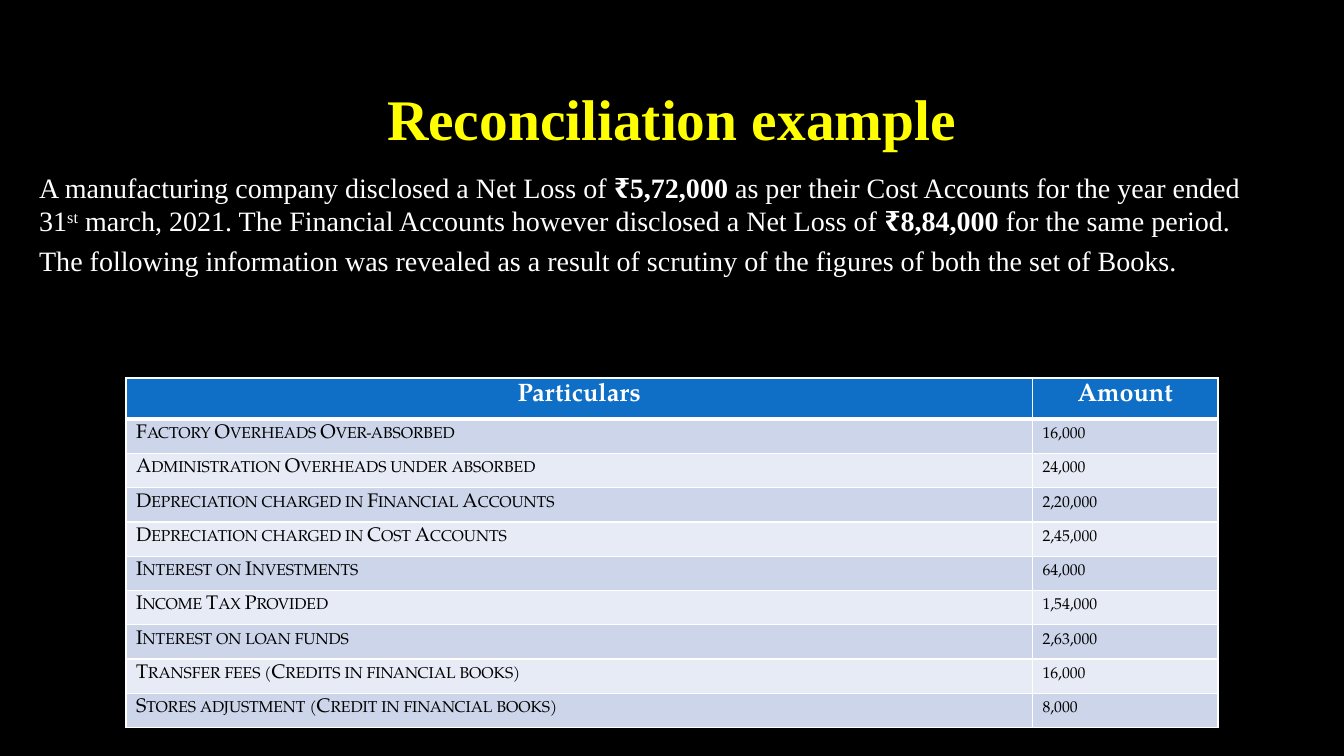
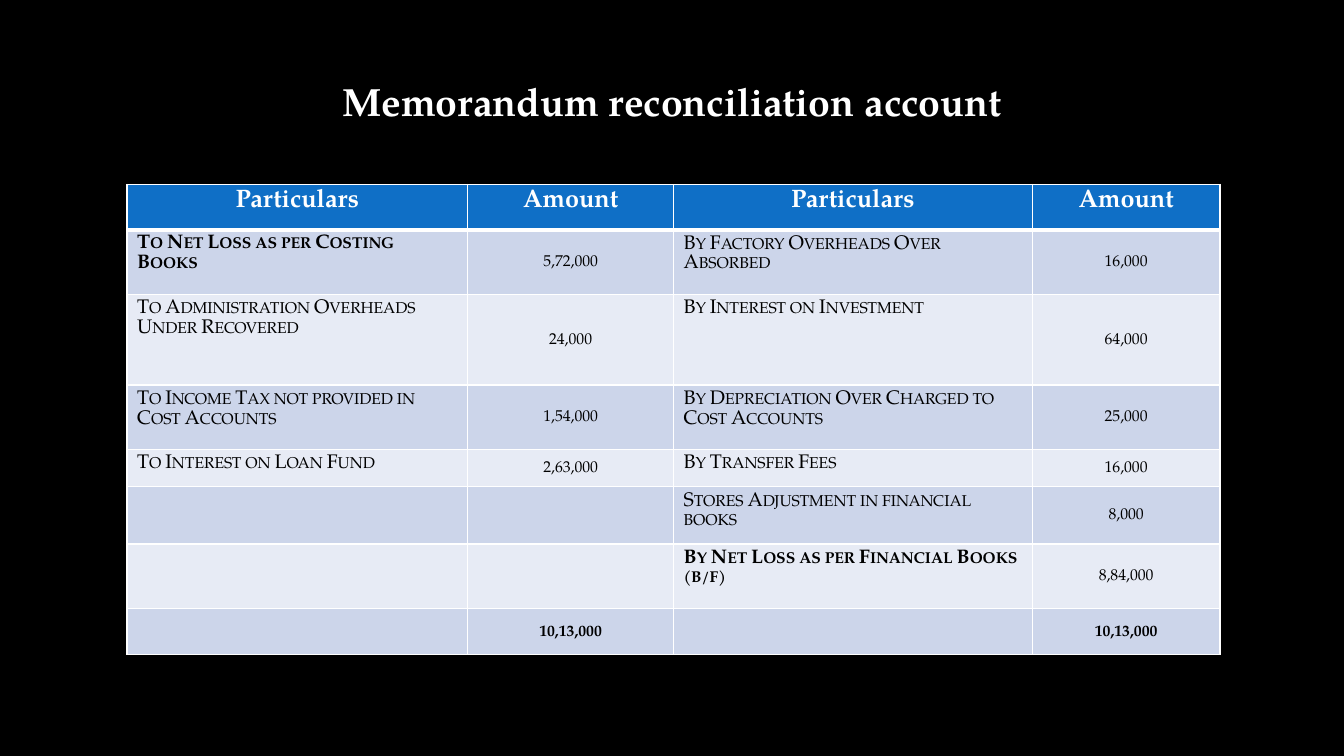
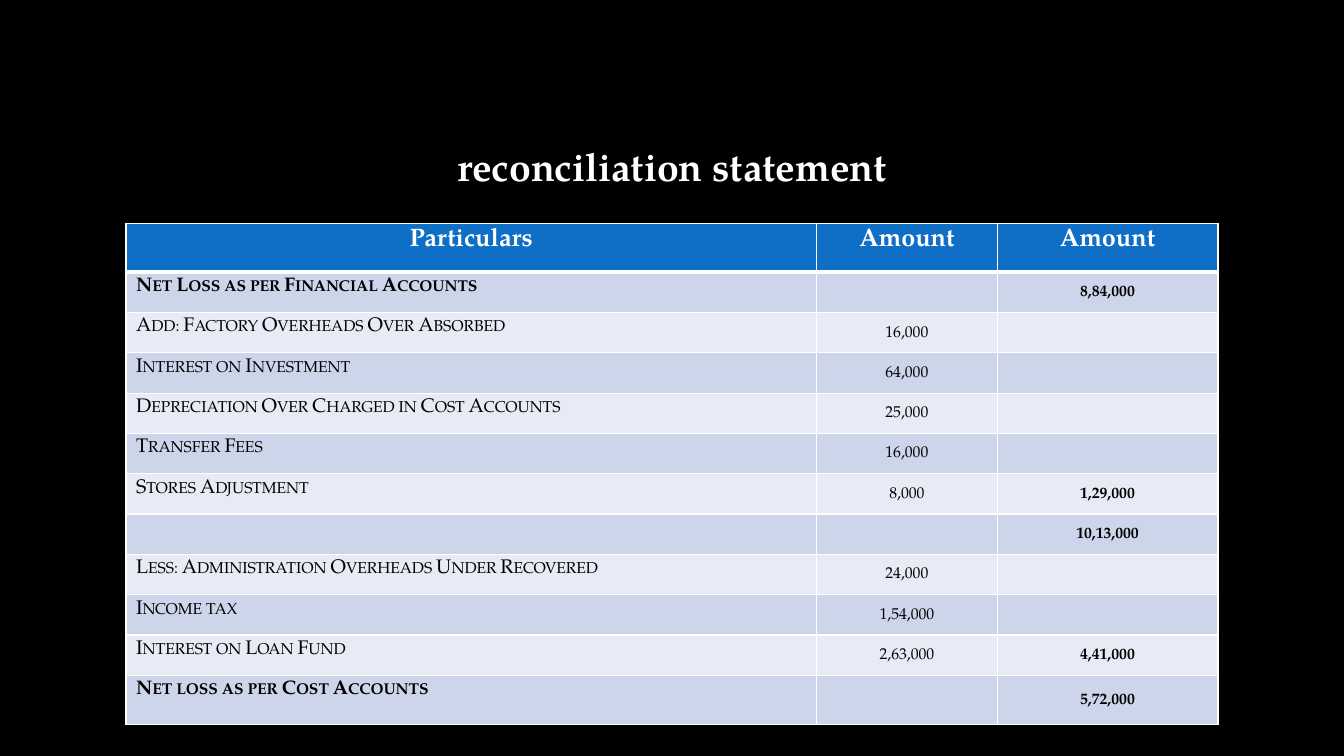
from dataclasses import dataclass

from lxml import etree
from pptx import Presentation
from pptx import util as u
from pptx.dml.color import RGBColor
from pptx.enum import text
from pptx.oxml import ns


@dataclass(frozen=True)
class Theme:
    """Colours, fonts and type sizes of the deck."""

    background: str = "000000"
    light: str = "FFFFFF"
    dark: str = "000000"
    accent: str = "FFFF00"
    header: str = "0F6FC6"
    bands: tuple = ("CCD5EA", "E7EBF5")
    serif: str = "Times New Roman"
    book: str = "TeX Gyre Pagella"
    title_size: float = 41
    heading_size: float = 28
    body_size: float = 20
    header_size: float = 18
    cell_size: float = 14
    thin: float = 1
    thick: float = 3


class Deck:
    """Holds the theme and the current slide and adds elements to it."""

    def __init__(self, theme):
        self.theme = theme
        self.presentation = Presentation()
        self.presentation.slide_width = u.Inches(13.33)
        self.presentation.slide_height = u.Inches(7.5)
        self.slide = None

    def add_slide(self):
        """Start a blank slide on the deck background."""
        layout = self.presentation.slide_layouts[6]
        self.slide = self.presentation.slides.add_slide(layout)
        fill = self.slide.background.fill
        fill.solid()
        fill.fore_color.rgb = RGBColor.from_string(self.theme.background)

    def style(self, paragraph, font_name, size, color, bold=False, centered=False):
        """Set the font and alignment of a whole paragraph."""
        paragraph.alignment = text.PP_ALIGN.CENTER if centered else text.PP_ALIGN.LEFT
        font = paragraph.font
        font.name = font_name
        font.size = u.Pt(size)
        font.bold = bold
        font.color.rgb = RGBColor.from_string(color)

    def text_frame(self, left, top, width, height, inset=0.05):
        """Add a wrapping text box and return its frame."""
        box = self.slide.shapes.add_textbox(*map(u.Inches, (left, top, width, height)))
        frame = box.text_frame
        frame.word_wrap = True
        frame.margin_top = u.Inches(inset)
        return frame

    def title(self, words):
        """Add the large accent title."""
        frame = self.text_frame(1.25, 0.67, 10.83, 1)
        frame.vertical_anchor = text.MSO_ANCHOR.MIDDLE
        paragraph = frame.paragraphs[0]
        paragraph.text = words
        self.style(paragraph, self.theme.serif, self.theme.title_size,
                   self.theme.accent, bold=True, centered=True)

    def heading(self, words, top):
        """Add the centred heading above an account."""
        paragraph = self.text_frame(1.25, top, 10.83, 0.9, inset=0.13).paragraphs[0]
        paragraph.text = words
        self.style(paragraph, self.theme.book, self.theme.heading_size,
                   self.theme.light, bold=True, centered=True)

    def body(self, paragraphs):
        """Add body paragraphs made of (words, emphasis) runs."""
        frame = self.text_frame(0.29, 1.6, 12.44, 1.4, inset=0.09)
        for index, runs in enumerate(paragraphs):
            paragraph = frame.add_paragraph() if index else frame.paragraphs[0]
            if index:
                paragraph.space_before = u.Pt(4)
            self.style(paragraph, self.theme.serif, self.theme.body_size, self.theme.light)
            for words, emphasis in runs:
                run = paragraph.add_run()
                run.text = words
                if emphasis == "bold":
                    run.font.bold = True
                elif emphasis == "superscript":
                    run.font._rPr.set("baseline", "30000")

    def borders(self, cell, row):
        """Draw cell borders, heavier between the header and the first row."""
        theme = self.theme
        widths = {"lnL": theme.thin, "lnR": theme.thin,
                  "lnT": theme.thick if row == 1 else theme.thin,
                  "lnB": theme.thick if row == 0 else theme.thin}
        properties = cell._tc.get_or_add_tcPr()
        for side, width in widths.items():
            line = etree.SubElement(properties, ns.qn(f"a:{side}"), w=str(u.Pt(width)))
            fill = etree.SubElement(line, ns.qn("a:solidFill"))
            etree.SubElement(fill, ns.qn("a:srgbClr"), val=theme.light)

    def table(self, left, top, columns, heights, rows, bold=(), centered=()):
        """Add a banded table; bold lists cells, centered lists columns."""
        theme = self.theme
        frame = self.slide.shapes.add_table(
            len(rows), len(columns), u.Inches(left), u.Inches(top),
            u.Inches(sum(columns)), u.Inches(sum(heights)))
        table = frame.table
        for column, width in zip(table.columns, columns):
            column.width = u.Inches(width)
        for row, height in zip(table.rows, heights):
            row.height = u.Inches(height)
        for row, values in enumerate(rows):
            for column, value in enumerate(values):
                cell = table.cell(row, column)
                self.borders(cell, row)
                cell.fill.solid()
                color = theme.bands[(row - 1) % 2] if row else theme.header
                cell.fill.fore_color.rgb = RGBColor.from_string(color)
                paragraph = cell.text_frame.paragraphs[0]
                if value:
                    paragraph.text = value
                if row == 0:
                    self.style(paragraph, theme.book, theme.header_size,
                               theme.light, bold=True, centered=True)
                    continue
                self.style(paragraph, theme.book, theme.cell_size, theme.dark,
                           bold=(row, column) in bold, centered=column in centered)
                paragraph.font._rPr.set("cap", "small")
                if column in centered:
                    cell.vertical_anchor = text.MSO_ANCHOR.MIDDLE


def example_slide(deck):
    """Build the slide that states the problem."""
    deck.add_slide()
    deck.title("Reconciliation example")
    deck.body([
        [("A manufacturing company disclosed a Net Loss of ", None),
         ("₹5,72,000 ", "bold"),
         ("as per their Cost Accounts for the year ended 31", None),
         ("st", "superscript"),
         (" march, 2021. The Financial Accounts however disclosed a Net Loss of ", None),
         ("₹8,84,000 ", "bold"),
         ("for the same period.", None)],
        [("The following information was revealed as a result of scrutiny "
          "of the figures of both the set of Books.", None)],
    ])
    deck.table(1.25, 3.75, [8.99, 1.84], [0.41] + [0.34] * 9, [
        ("Particulars", "Amount"),
        ("Factory Overheads Over-absorbed", "16,000"),
        ("Administration Overheads under absorbed", "24,000"),
        ("Depreciation charged in Financial Accounts", "2,20,000"),
        ("Depreciation charged in Cost Accounts", "2,45,000"),
        ("Interest on Investments", "64,000"),
        ("Income Tax Provided", "1,54,000"),
        ("Interest on loan funds", "2,63,000"),
        ("Transfer fees (Credits in financial books)", "16,000"),
        ("Stores adjustment (Credit in financial books)", "8,000"),
    ])


def memorandum_slide(deck):
    """Build the two-sided memorandum account."""
    deck.add_slide()
    deck.heading("Memorandum reconciliation account", 0.64)
    heights = [0.45, 0.64, 0.9, 0.64, 0.37, 0.5, 0.64, 0.46]
    deck.table(1.26, 1.83, [3.38, 2.04, 3.56, 1.86], heights, [
        ("Particulars", "Amount") * 2,
        ("To Net Loss as per Costing Books", "5,72,000",
         "By Factory Overheads Over Absorbed", "16,000"),
        ("To Administration Overheads Under Recovered", "24,000",
         "By Interest on Investment", "64,000"),
        ("To Income Tax not provided in Cost Accounts", "1,54,000",
         "By Depreciation Over Charged to Cost Accounts", "25,000"),
        ("To Interest on Loan Fund", "2,63,000", "By Transfer Fees", "16,000"),
        ("", "", "Stores Adjustment in financial books", "8,000"),
        ("", "", "By Net Loss as per Financial Books (b/f)", "8,84,000"),
        ("", "10,13,000", "", "10,13,000"),
    ], bold={(1, 0), (6, 2), (7, 1), (7, 3)}, centered={1, 3})


def statement_slide(deck):
    """Build the reconciliation statement."""
    deck.add_slide()
    deck.heading("reconciliation statement", 1.28)
    rows = [
        ("Particulars", "Amount", "Amount"),
        ("Net Loss as per Financial Accounts", "", "8,84,000"),
        ("Add: Factory Overheads Over Absorbed", "16,000", ""),
        ("Interest on Investment", "64,000", ""),
        ("Depreciation Over Charged in Cost Accounts", "25,000", ""),
        ("Transfer Fees", "16,000", ""),
        ("Stores Adjustment", "8,000", "1,29,000"),
        ("", "", "10,13,000"),
        ("Less: Administration Overheads Under Recovered", "24,000", ""),
        ("Income tax", "1,54,000", ""),
        ("Interest on Loan Fund", "2,63,000", "4,41,000"),
        ("Net loss as per Cost Accounts", "", "5,72,000"),
    ]
    totals = {(row, 2) for row in range(1, len(rows))}
    deck.table(1.25, 2.22, [6.85, 1.79, 2.19], [0.48] + [0.4] * 10 + [0.49], rows,
               bold=totals | {(1, 0), (11, 0)}, centered={1, 2})


def main():
    """Build and save the deck."""
    deck = Deck(Theme())
    for build in (example_slide, memorandum_slide, statement_slide):
        build(deck)
    deck.presentation.save("out.pptx")


if __name__ == "__main__":
    main()
